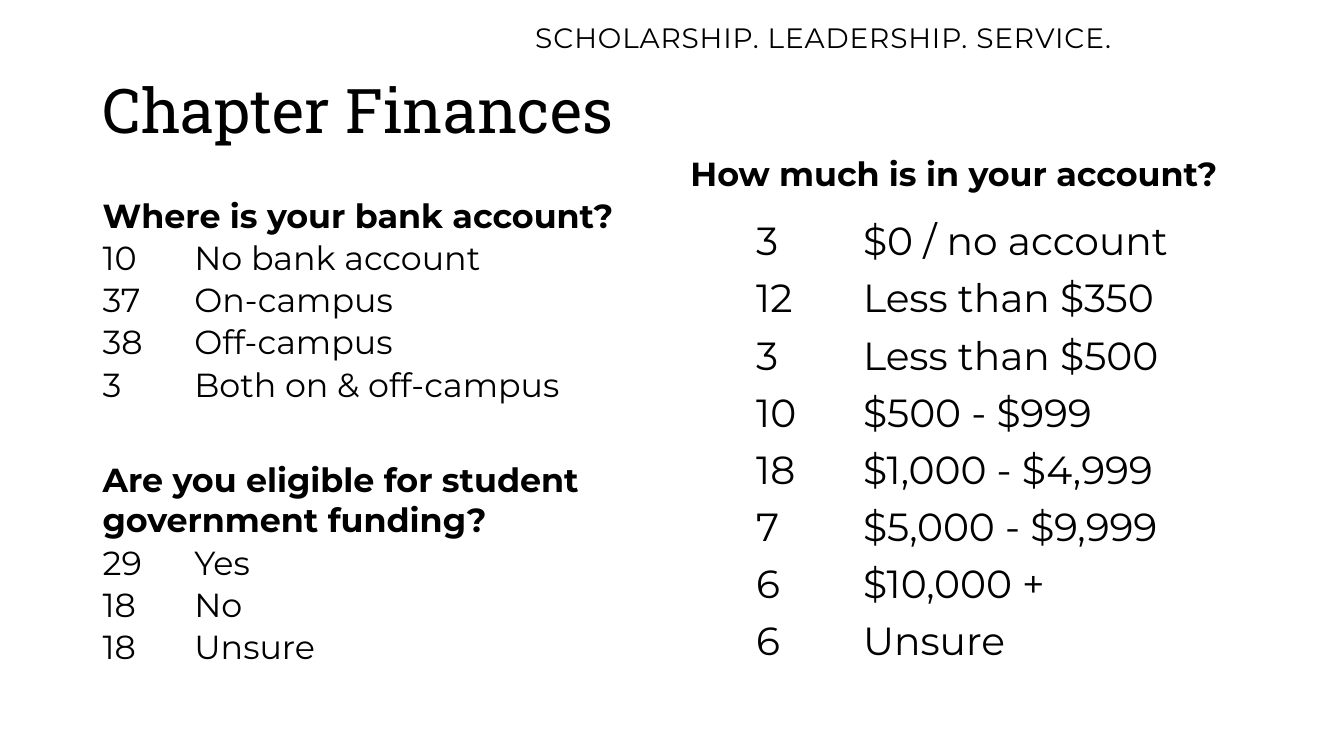
from lxml.etree import SubElement
from pptx import Presentation
from pptx.dml.color import RGBColor
from pptx.enum.text import MSO_ANCHOR
from pptx.oxml.ns import qn
from pptx.util import Inches, Pt

MOTTO = "SCHOLARSHIP. LEADERSHIP. SERVICE."
TITLE = "Chapter Finances"
SURVEYS = [
    ("Where is your bank account?", 0.7, [
        ("10", "No bank account"),
        ("37", "On-campus"),
        ("38", "Off-campus"),
        ("3", "Both on & off-campus"),
    ]),
    ("Are you eligible for student government funding?", 1.0, [
        ("29", "Yes"),
        ("18", "No"),
        ("18", "Unsure"),
    ]),
]
BALANCE_QUESTION = "How much is in your account?"
BALANCES = [
    ("3", "$0 / no account"),
    ("12", "Less than $350"),
    ("3", "Less than $500"),
    ("10", "$500 - $999"),
    ("18", "$1,000 - $4,999"),
    ("7", "$5,000 - $9,999"),
    ("6", "$10,000 +"),
    ("6", "Unsure"),
]
BODY_SIZE = 23.8
SECTION_GAP = 40.3


def color(value):
    return RGBColor.from_string(value)


def write(p, text, size=BODY_SIZE, font="Montserrat", bold=False, ink="000000",
          line=None, before=0, tab=None, tracking=None):
    if tab:
        tabs = SubElement(p._p.get_or_add_pPr(), qn("a:tabLst"))
        SubElement(tabs, qn("a:tab"), pos=str(Inches(tab)), algn="l")
    if line:
        p.line_spacing = line
    p.space_before = Pt(before)
    r = p.add_run()
    r.text = text
    r.font.size = Pt(size)
    r.font.name = font
    r.font.bold = bold
    r.font.color.rgb = color(ink)
    if tracking:
        r.font._element.set("spc", str(tracking))


def add_box(s, left, top, width, height, wrap=True, anchor=MSO_ANCHOR.TOP):
    tf = s.shapes.add_textbox(*map(Inches, (left, top, width, height))).text_frame
    tf.word_wrap = wrap
    tf.vertical_anchor = anchor
    return tf


def add_surveys(s):
    tf = add_box(s, 0.92, 2, 5.67, 4.76)
    for i, (question, line, answers) in enumerate(SURVEYS):
        p = tf.add_paragraph() if i else tf.paragraphs[0]
        write(p, question, bold=True, line=line, before=SECTION_GAP if i else 0)
        for count, answer in answers:
            write(tf.add_paragraph(), f"{count}\t{answer}", line=0.7, before=10, tab=0.91)


def add_balances(s):
    frame = s.shapes.add_table(len(BALANCES), 2, *map(Inches, (7.4, 2.11, 4.36, 4.53)))
    table = frame.table
    table.first_row = table.horz_banding = False
    for column, width in zip(table.columns, (1.06, 3.3)):
        column.width = Inches(width)
    for row, values in zip(table.rows, BALANCES):
        for cell, value in zip(row.cells, values):
            cell.fill.background()
            write(cell.text_frame.paragraphs[0], value, size=28)


def main():
    """Build the chapter finances slide."""
    prs = Presentation()
    prs.slide_width, prs.slide_height = Inches(13.33), Inches(7.5)
    s = prs.slides.add_slide(prs.slide_layouts[6])
    s.background.fill.solid()
    s.background.fill.fore_color.rgb = color("FFFFFF")
    tf = add_box(s, 5.21, 0.15, 6.11, 0.44, wrap=False)
    write(tf.paragraphs[0], MOTTO, size=20, tracking=60)
    tf = add_box(s, 0.92, 0.4, 11.5, 1.45, anchor=MSO_ANCHOR.MIDDLE)
    write(tf.paragraphs[0], TITLE, size=44, font="Roboto Slab", line=0.9)
    add_surveys(s)
    tf = add_box(s, 6.75, 1.58, 5.67, 0.5)
    write(tf.paragraphs[0], BALANCE_QUESTION, bold=True, line=0.7)
    add_balances(s)
    prs.save("out.pptx")


if __name__ == "__main__":
    main()
